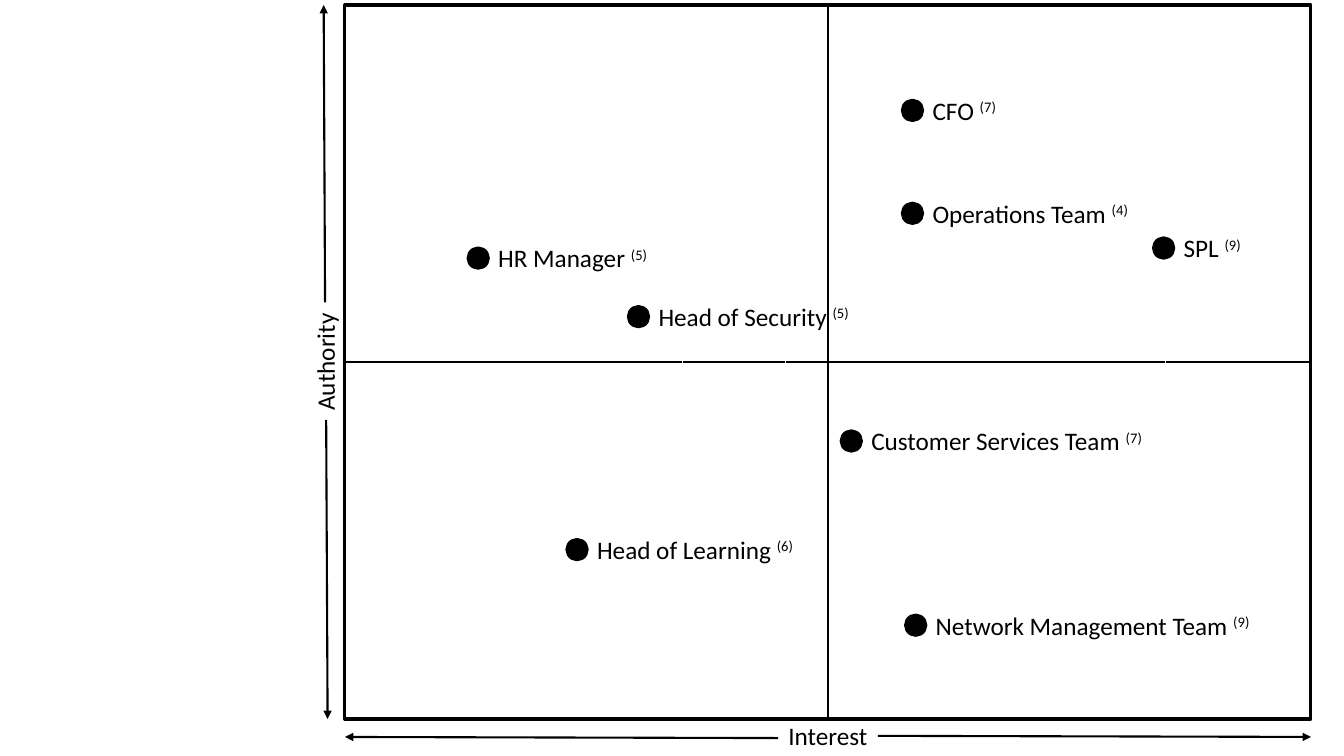
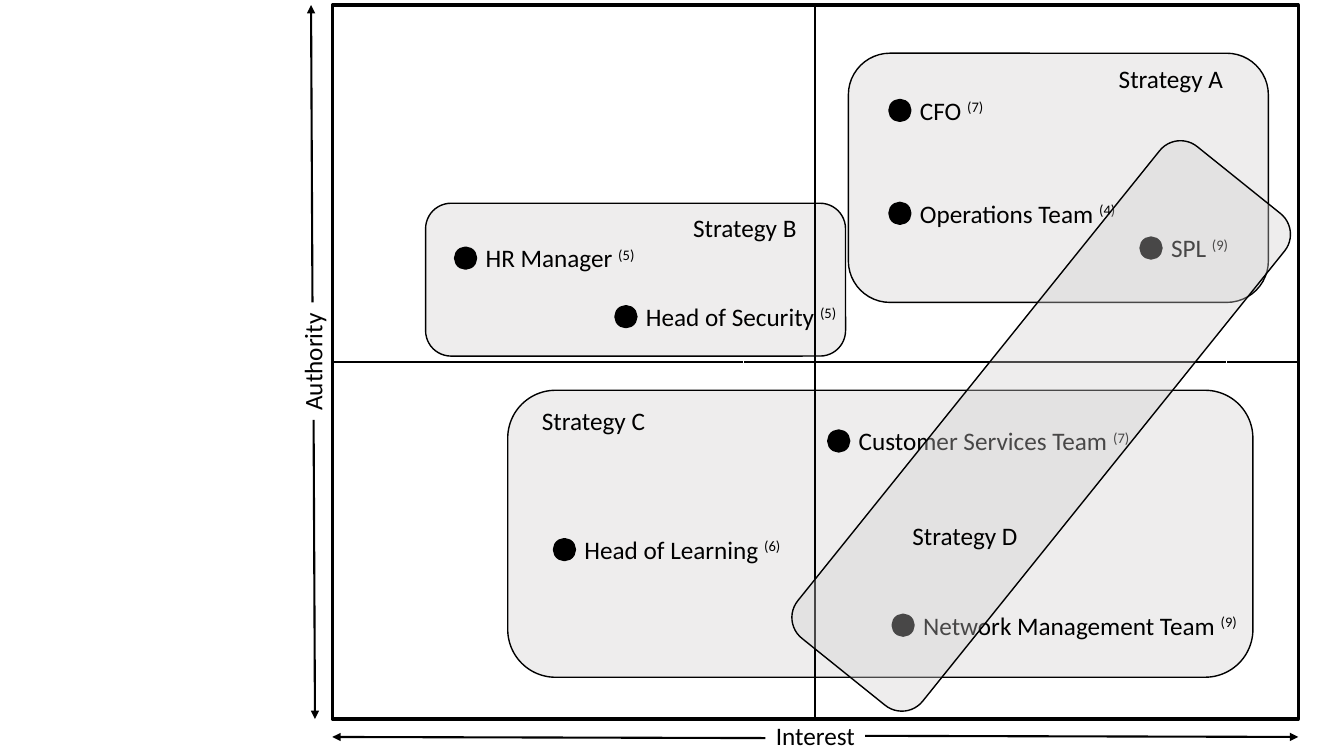
import pptx
import pptx.dml.color
import pptx.enum.dml
import pptx.enum.shapes
import pptx.enum.text
import pptx.oxml.ns
import pptx.oxml.xmlchemy
import pptx.util

Pt = pptx.util.Pt
SHAPE = pptx.enum.shapes.MSO_SHAPE
ALIGN = pptx.enum.text.PP_ALIGN

COLORS = {"ink": "000000", "panel": "D0CECE"}
FONT = "Calibri"
TEXT_SIZE = 18
GRID_TOP, GRID_WIDTH, GRID_HEIGHT = 3.6, 690, 510
DOT_SIZE = 14.4
LABEL_HEIGHT = 29.08
LABEL_RISE = 7.34
AXIS_GAP = 35.6

STAKEHOLDERS = [
    ("HR Manager ", "(5)", 88, 177.2, 124),
    ("Head of Security ", "(5)", 202.5, 219, 154),
    ("CFO ", "(7)", 398.2, 71.7, 62),
    ("SPL ", "(9)", 577.6, 170, 57.6),
    ("Operations Team ", "(4)", 398.2, 145.2, 157.7),
    ("Head of Learning ", "(6)", 158.6, 385.4, 158.4),
    ("Customer Services Team ", "(7)", 354.5, 307.8, 211.7),
    ("Network Management Team ", "(9)", 400.5, 439.4, 242.6),
]

BACK_PANELS = [
    (362.7, 278.8, 532.3, 205),
    (304, 145.2, 300, 109.2),
    (606, 38, 300, 178),
]
DIAGONAL_PANEL = (518.4, 247, 450.7, 114.5)
DIAGONAL_ANGLE = 308.8

STRATEGIES = [
    ("Strategy A", 792, 42, 90),
    ("Strategy B", 488, 148.4, 89.3),
    ("Strategy C", 380, 286.2, 89.3),
    ("Strategy D", 644.6, 368.2, 90.7),
]


def color(name):
    return pptx.dml.color.RGBColor.from_string(COLORS[name])


def add_element(parent, tag, **attributes):
    element = pptx.oxml.xmlchemy.OxmlElement(tag)
    for name, value in attributes.items():
        element.set(name, value)
    parent.append(element)


def add_figure(page, kind, frame, weight, fill=None, opacity=None, dashed=False, angle=0):
    figure = page.shapes.add_shape(kind, *map(Pt, frame))
    figure.shadow.inherit = False
    figure.rotation = angle
    figure.line.color.rgb = color("ink")
    figure.line.width = Pt(weight)
    if dashed:
        figure.line.dash_style = pptx.enum.dml.MSO_LINE.DASH
    if fill is None:
        figure.fill.background()
        return
    figure.fill.solid()
    figure.fill.fore_color.rgb = color(fill)
    if opacity is not None:
        solid = figure._element.spPr.find(pptx.oxml.ns.qn("a:solidFill"))
        add_element(solid[0], "a:alpha", val=str(opacity * 1000))


def add_text(page, text, frame, note="", align=ALIGN.LEFT, angle=0):
    box = page.shapes.add_textbox(*map(Pt, frame))
    box.rotation = angle
    box.text_frame.word_wrap = False
    box.text_frame.auto_size = pptx.enum.text.MSO_AUTO_SIZE.SHAPE_TO_FIT_TEXT
    para = box.text_frame.paragraphs[0]
    para.alignment = align
    for words, baseline in ((text, 0), (note, 30000)):
        if not words:
            continue
        span = para.add_run()
        span.text = words
        span.font.name = FONT
        span.font.size = Pt(TEXT_SIZE)
        span.font.color.rgb = color("ink")
        if baseline:
            span._r.get_or_add_rPr().set("baseline", str(baseline))


def add_arrow(page, start, end, tip):
    arrow = page.shapes.add_connector(
        pptx.enum.shapes.MSO_CONNECTOR.STRAIGHT, *map(Pt, start + end))
    arrow.line.color.rgb = color("ink")
    arrow.line.width = Pt(1.5)
    outline = arrow._element.spPr.find(pptx.oxml.ns.qn("a:ln"))
    add_element(outline, tip, type="triangle")
    add_element(arrow._element.spPr, "a:effectLst")


def add_panel(page, frame, angle=0):
    add_figure(page, SHAPE.ROUNDED_RECTANGLE, frame, 1, fill="panel", opacity=35, angle=angle)


def add_grid(page, left):
    add_figure(page, SHAPE.RECTANGLE, (left, GRID_TOP, GRID_WIDTH, GRID_HEIGHT), 2.25)
    width, height = GRID_WIDTH / 2, GRID_HEIGHT / 2
    for column, row in ((1, 1), (1, 0), (0, 0), (0, 1)):
        frame = (left + column * width, GRID_TOP + row * height, width, height)
        add_figure(page, SHAPE.RECTANGLE, frame, 1.5, dashed=True)


def add_axes(page, left):
    middle, right = left + GRID_WIDTH / 2, left + GRID_WIDTH
    bottom = GRID_TOP + GRID_HEIGHT
    center = GRID_TOP + GRID_HEIGHT / 2
    add_text(page, "Interest", (middle - AXIS_GAP, 511.2, 2 * AXIS_GAP, LABEL_HEIGHT),
             align=ALIGN.CENTER)
    add_arrow(page, (middle + AXIS_GAP, 525.6), (right, 526.4), "a:tailEnd")
    add_arrow(page, (left, 526.4), (middle - AXIS_GAP, 527.2), "a:headEnd")
    add_text(page, "Authority", (left - 56.2, center - LABEL_HEIGHT / 2, 84.2, LABEL_HEIGHT),
             align=ALIGN.CENTER, angle=270)
    add_arrow(page, (left - 14.2, 216), (left - 15.2, GRID_TOP), "a:tailEnd")
    add_arrow(page, (left - 12.4, bottom), (left - 13.4, 300), "a:headEnd")


def add_stakeholders(page, left):
    for name, score, across, top, width in STAKEHOLDERS:
        dot_left = left + across
        add_figure(page, SHAPE.OVAL, (dot_left, top, DOT_SIZE, DOT_SIZE), 2.25, fill="ink")
        frame = (dot_left + DOT_SIZE, top - LABEL_RISE, width, LABEL_HEIGHT)
        add_text(page, name, frame, note=score)


def add_map(page, left):
    add_grid(page, left)
    add_axes(page, left)
    add_stakeholders(page, left)


def main():
    deck = pptx.Presentation()
    deck.slide_width, deck.slide_height = Pt(960), Pt(540)
    blank = deck.slide_layouts[6]

    add_map(deck.slides.add_slide(blank), 246.4)

    page = deck.slides.add_slide(blank)
    for frame in BACK_PANELS:
        add_panel(page, frame)
    add_map(page, 237.4)
    add_panel(page, DIAGONAL_PANEL, angle=DIAGONAL_ANGLE)
    for name, left, top, width in STRATEGIES:
        add_text(page, name, (left, top, width, LABEL_HEIGHT))

    deck.save("out.pptx")


if __name__ == "__main__":
    main()
